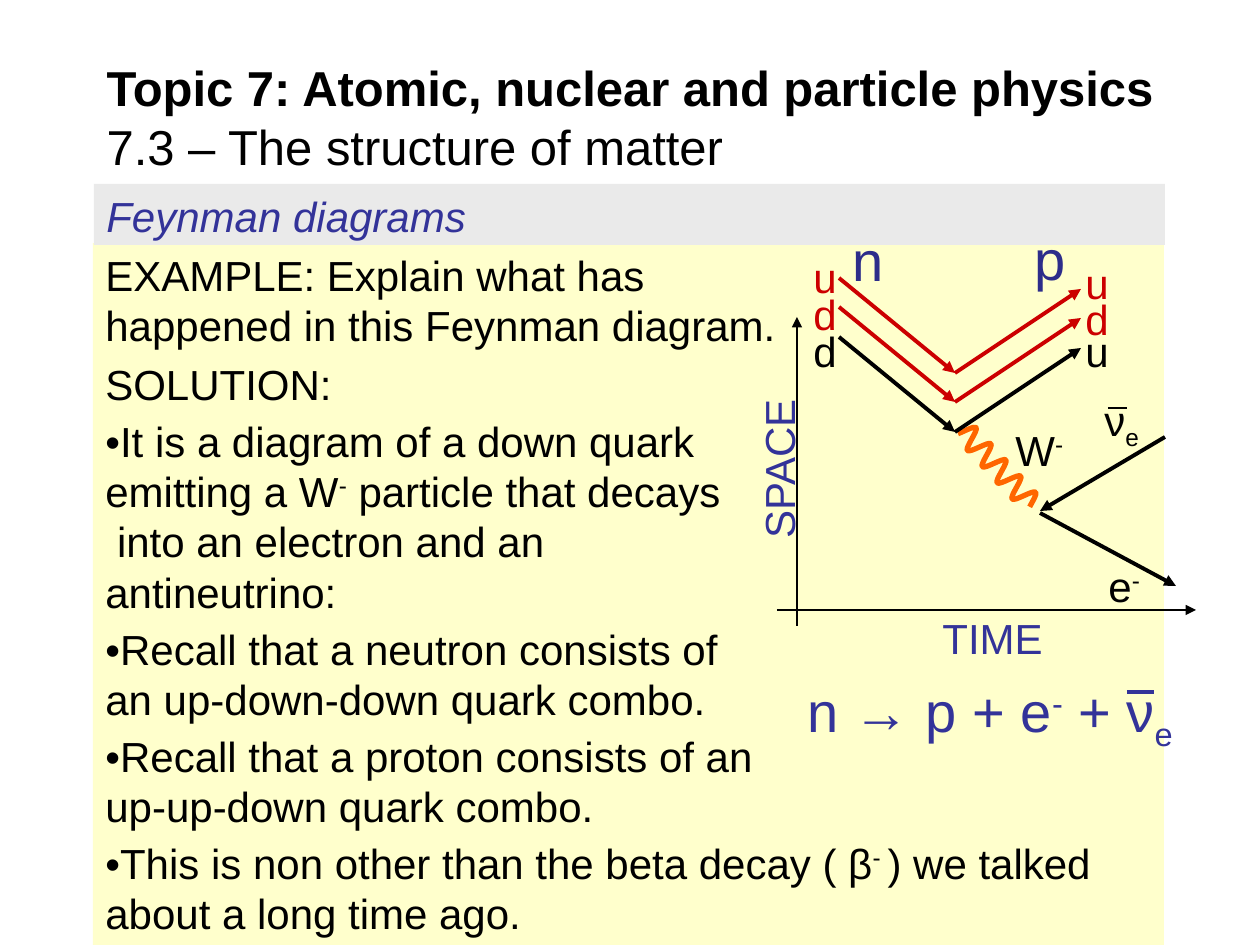
from math import cos, pi, sin

from lxml import etree
from pptx import Presentation
from pptx.dml.color import RGBColor
from pptx.enum.shapes import MSO_CONNECTOR, MSO_SHAPE
from pptx.enum.text import MSO_ANCHOR, MSO_AUTO_SIZE, PP_ALIGN
from pptx.oxml.ns import qn
from pptx.util import Emu, Pt

PX_PER_INCH = 126
FONT = "Arial"
BLACK, RED, BLUE, NAVY = "000000", "CC0000", "333399", "2D2D8A"
ORANGE, CREAM, GREY = "FF6600", "FFFFCC", "EAEAEA"
BASELINES = {"^": "30000", "_": "-25000"}

SOLUTION = [
    ("EXAMPLE: Explain what has\vhappened in this Feynman diagram.", 0),
    ("SOLUTION:", 4.8),
    ("•It is a diagram of a down quark\vemitting a W|^-| particle that decays\v"
     " into an electron and an\vantineutrino:", 3.6),
    ("•Recall that a neutron consists of\van up-down-down quark combo.", 3.6),
    ("•Recall that a proton consists of an\vup-up-down quark combo.", 3.6),
    ("•This is non other than the beta decay ( β|^- |) we talked about a long time ago.", 3.6),
]

# line start y, colour, quark before, its label top, quark after, its label top
QUARKS = [
    (278, RED, "u", 245, "u", 251),
    (307, RED, "d", 282, "d", 287),
    (337, BLACK, "d", 319, "u", 319),
]

# left, top, width, height, text, size, colour
LABELS = [
    (930, 606, 134, 63, "TIME", 24, BLUE),
    (1096, 554, 79, 63, "e|^-", 24, BLACK),
    (1092, 388, 84, 63, "ν|_e", 24, BLACK),
    (1003, 418, 97, 63, "W|^-", 24, BLACK),
    (840, 219, 52, 81, "n", 32, NAVY),
    (1022, 218, 52, 81, "p", 32, NAVY),
    (795, 670, 440, 81, "n → p + e|^-| + ν|_e", 32, BLUE),
]


def px(length):
    return Emu(round(length * 914400 / PX_PER_INCH))


def rgb(value):
    return RGBColor.from_string(value)


def format_run(run, size, colour, bold=False, italic=False):
    font = run.font
    font.name, font.size = FONT, Pt(size)
    font.bold, font.italic = bold, italic
    font.color.rgb = rgb(colour)


def write(paragraph, marked, size, colour, italic=False):
    """Write parts divided by |, where a leading ^ raises and _ lowers the part."""
    paragraph.alignment = PP_ALIGN.LEFT
    for part in marked.split("|"):
        baseline = BASELINES.get(part[0])
        for index, line in enumerate(part.lstrip("^_").split("\v")):
            if index:
                paragraph.add_line_break()
            run = paragraph.add_run()
            run.text = line
            format_run(run, size, colour, italic=italic)
            if baseline:
                run.font._element.set("baseline", baseline)


def add_title(slide):
    title = slide.shapes.title
    title.left, title.top, title.width, title.height = map(px, (94, 59, 1129, 115))
    frame = title.text_frame
    frame.auto_size = MSO_AUTO_SIZE.NONE
    frame.vertical_anchor = MSO_ANCHOR.MIDDLE
    paragraph = frame.paragraphs[0]
    paragraph.text = "Topic 7: Atomic, nuclear and particle physics\v7.3 – The structure of matter"
    paragraph.alignment = PP_ALIGN.LEFT
    topic, section = paragraph.runs
    format_run(topic, 28, BLACK, bold=True)
    format_run(section, 28, BLACK)


def add_panel(slide, left, top, width, height, fill, paragraphs, colour, italic=False):
    panel = slide.shapes.add_shape(MSO_SHAPE.RECTANGLE, *map(px, (left, top, width, height)))
    panel.shadow.inherit = False
    panel.fill.solid()
    panel.fill.fore_color.rgb = rgb(fill)
    panel.line.fill.background()
    frame = panel.text_frame
    frame.word_wrap = True
    frame.vertical_anchor = MSO_ANCHOR.TOP
    for index, (text, space) in enumerate(paragraphs):
        paragraph = frame.add_paragraph() if index else frame.paragraphs[0]
        paragraph.space_before = Pt(space)
        write(paragraph, text, 24, colour, italic)


def add_label(slide, left, top, width, height, text, size, colour):
    label = slide.shapes.add_textbox(*map(px, (left, top, width, height)))
    label.text_frame.word_wrap = True
    write(label.text_frame.paragraphs[0], text, size, colour)
    return label


def add_line(slide, start, end, colour, weight, arrow=True):
    line = slide.shapes.add_connector(MSO_CONNECTOR.STRAIGHT, *map(px, (*start, *end)))
    line.line.color.rgb = rgb(colour)
    line.line.width = Pt(weight)
    if arrow:
        etree.SubElement(line.line._get_or_add_ln(), qn("a:tailEnd"), type="triangle")
    etree.SubElement(line._element.spPr, qn("a:effectLst"))


def add_boson_wave(slide):
    """Draw a cosine with one curve per half wave, then tilt it along the W path."""
    half_wave, amplitude = 11, 11
    phases = [-0.7, *range(9), 8.6]

    def position(phase):
        return 954 + half_wave * phase, 467 - amplitude * cos(pi * phase)

    def control(phase, reach):
        x, y = position(phase)
        return x + half_wave * reach, y + amplitude * pi * sin(pi * phase) * reach

    anchors = [tuple(map(px, position(phase))) for phase in phases]
    builder = slide.shapes.build_freeform(*anchors[0])
    builder.add_line_segments(anchors[1:], close=False)
    wave = builder.convert_to_shape()
    segments = list(wave._element.iter(qn("a:lnTo")))
    for segment, start, end in zip(segments, phases, phases[1:]):
        reach = (end - start) / 3
        segment.tag = qn("a:cubicBezTo")
        for index, (x, y) in enumerate((control(start, reach), control(end, -reach))):
            point = etree.Element(qn("a:pt"), x=str(px(x) - wave.left), y=str(px(y) - wave.top))
            segment.insert(index, point)
    wave.rotation = 47.3
    wave.shadow.inherit = False
    wave.fill.background()
    wave.line.color.rgb = rgb(ORANGE)
    wave.line.width = Pt(3)


def add_quarks(slide):
    for y, colour, before, before_top, after, after_top in QUARKS:
        vertex = (955, y + 95)
        add_line(slide, (839, y), vertex, colour, 2.25)
        add_line(slide, vertex, (1081, y + 11), colour, 2.25)
        add_label(slide, 801, before_top, 60, 63, before, 24, colour)
        add_label(slide, 1073, after_top, 60, 63, after, 24, colour)


def main():
    presentation = Presentation()
    presentation.slide_width, presentation.slide_height = px(1260), px(945)
    slide = presentation.slides.add_slide(presentation.slide_layouts[5])
    add_title(slide)
    add_panel(slide, 93, 243, 1071, 702, CREAM, SOLUTION, BLACK)
    add_panel(slide, 94, 184, 1071, 61, GREY, [("Feynman diagrams", 0)], BLUE, italic=True)

    add_boson_wave(slide)
    add_line(slide, (797, 626), (797, 317), BLACK, 0.75)
    add_line(slide, (777, 610), (1196, 610), BLACK, 0.75)
    add_quarks(slide)
    add_line(slide, (1165, 437), (1040, 511), BLACK, 2.25)
    add_line(slide, (1040, 513), (1176, 586), BLACK, 2.25)

    add_label(slide, 684, 425, 189, 63, "SPACE", 24, BLUE).rotation = 270
    for label in LABELS:
        add_label(slide, *label)
    add_line(slide, (1108, 408), (1127, 408), BLACK, 1.5, arrow=False)
    add_line(slide, (1127, 692), (1154, 692), BLUE, 2.25, arrow=False)
    presentation.save("out.pptx")


if __name__ == "__main__":
    main()
